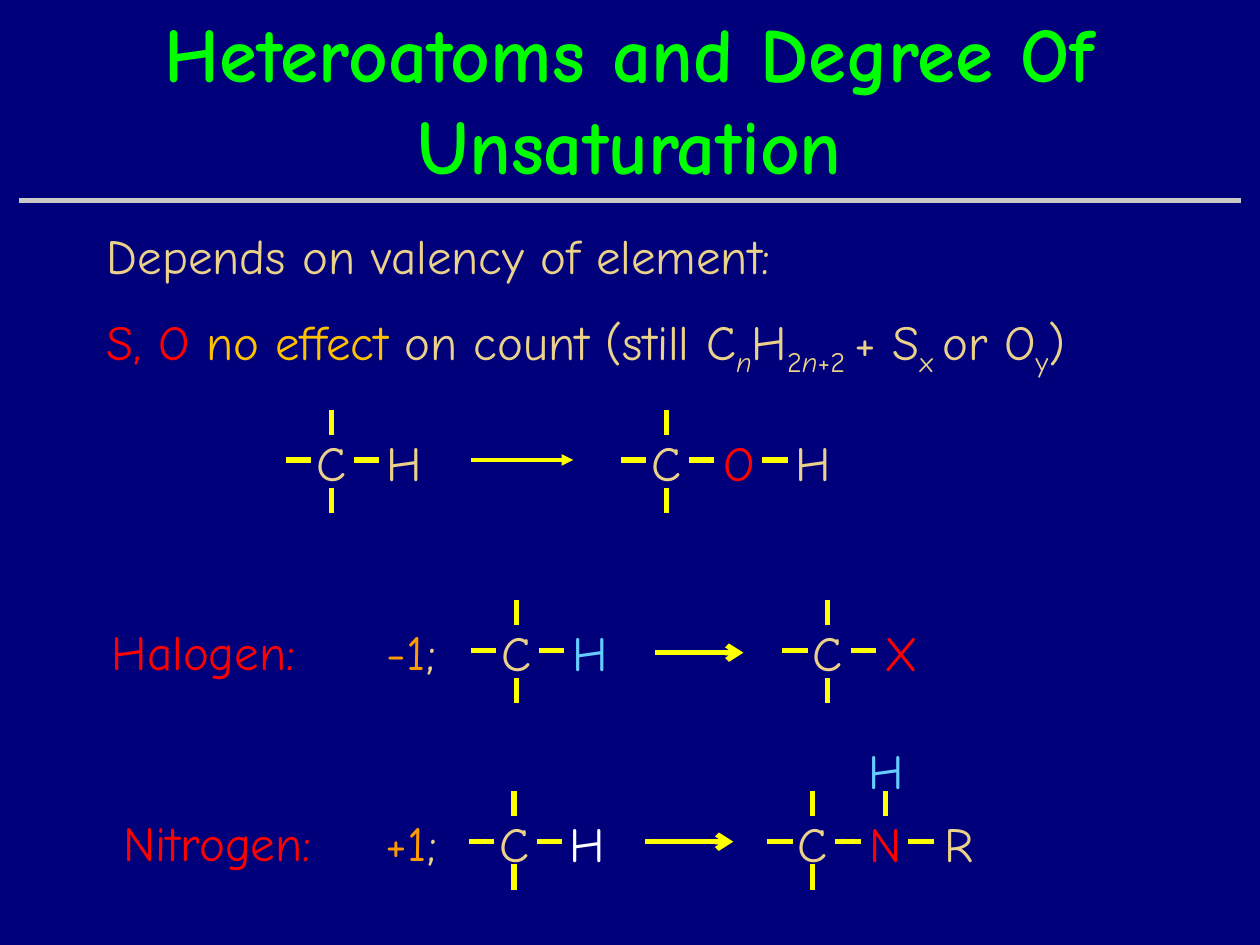
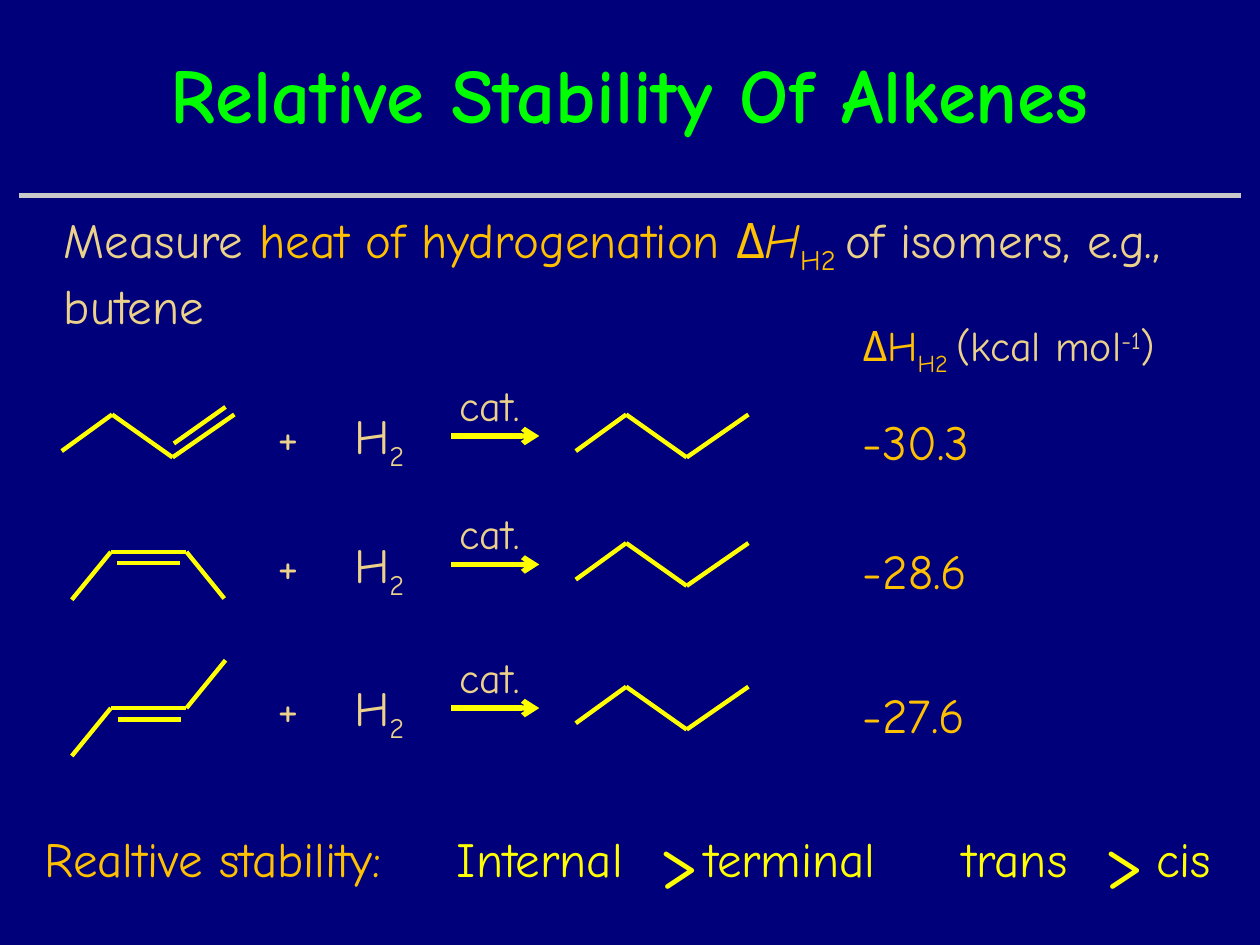
from itertools import pairwise

from lxml.etree import SubElement
from pptx import Presentation
from pptx.dml.color import RGBColor
from pptx.enum.shapes import MSO_CONNECTOR
from pptx.enum.text import MSO_ANCHOR, PP_ALIGN
from pptx.oxml.ns import qn
from pptx.util import Inches, Pt

NAVY = RGBColor(0x00, 0x00, 0x7A)
GREEN = RGBColor(0x00, 0xFF, 0x00)
SILVER = RGBColor(0xC9, 0xC9, 0xC9)
SAND = RGBColor(0xEB, 0xD1, 0x89)
RED = RGBColor(0xFF, 0x00, 0x00)
AMBER = RGBColor(0xFF, 0xC0, 0x00)
ORANGE = RGBColor(0xFF, 0x99, 0x00)
YELLOW = RGBColor(0xFF, 0xFF, 0x00)
SKY = RGBColor(0x66, 0xCC, 0xFF)
WHITE = RGBColor(0xFF, 0xFF, 0xFF)

FONT = "Comic Neue"
BASELINES = {"sub": "-25000", "sup": "30000"}
LINE_HEIGHT = 0.57
ATOM_WIDTH = 0.55
ATOM_STEP = 0.58
BOND_LENGTH = 0.2
ZIGZAG = [(0, 0.29), (0.4, 0), (0.88, 0.34), (1.37, 0)]


def add_text(shapes, box, runs, size=28, align=PP_ALIGN.CENTER, bold=False):
    """Add a text box; each run is (text, colour) or (text, colour, style words)."""
    shape = shapes.add_textbox(*map(Inches, box))
    text_frame = shape.text_frame
    text_frame.word_wrap = True
    paragraph = text_frame.paragraphs[0]
    paragraph.alignment = align
    for text, color, *styles in runs:
        run = paragraph.add_run()
        run.text = text
        font = run.font
        font.name, font.size, font.bold = FONT, Pt(size), bold
        font.color.rgb = color
        font.italic = "italic" in styles
        for style in styles:
            if style in BASELINES:
                run._r.get_or_add_rPr().set("baseline", BASELINES[style])
    return shape


def add_line(shapes, start, end, color=YELLOW, width=3, head=None):
    ends = map(Inches, (*start, *end))
    connector = shapes.add_connector(MSO_CONNECTOR.STRAIGHT, *ends)
    connector.line.color.rgb = color
    connector.line.width = Pt(width)
    if head:
        SubElement(connector.line._get_or_add_ln(), qn("a:tailEnd"), type=head)
    SubElement(connector._element.spPr, qn("a:effectLst"))


def add_titled_slide(presentation, title, title_top, rule_y):
    slide = presentation.slides.add_slide(presentation.slide_layouts[6])
    slide.background.fill.solid()
    slide.background.fill.fore_color.rgb = NAVY
    box = add_text(slide.shapes, (0.75, title_top, 8.5, 1.25),
                   [(title, GREEN)], size=44, bold=True)
    box.text_frame.vertical_anchor = MSO_ANCHOR.MIDDLE
    add_line(slide.shapes, (0.15, rule_y), (9.85, rule_y), SILVER)
    return slide


def add_atom(shapes, x, y, symbol, color):
    box = (x - ATOM_WIDTH / 2, y - 0.27, ATOM_WIDTH, LINE_HEIGHT)
    add_text(shapes, box, [(symbol, color)])


def add_molecule(slide, x, y, substituents, lower_gap=0.22, branch=None):
    """Draw a carbon at (x, y) with a chain to its right and a branch on the first atom."""
    shapes = slide.shapes.add_group_shape().shapes

    def horizontal_bond(left):
        add_line(shapes, (left, y), (left + BOND_LENGTH, y))

    def vertical_bond(bond_x, top):
        add_line(shapes, (bond_x, top), (bond_x, top + BOND_LENGTH))

    add_atom(shapes, x, y, "C", SAND)
    horizontal_bond(x - 0.36)
    vertical_bond(x, y - 0.4)
    vertical_bond(x, y + lower_gap)
    for index, (symbol, color) in enumerate(substituents):
        horizontal_bond(x + 0.18 + index * ATOM_STEP)
        add_atom(shapes, x + (index + 1) * ATOM_STEP, y, symbol, color)
    if branch:
        vertical_bond(x + ATOM_STEP, y - 0.4)
        add_atom(shapes, x + ATOM_STEP, y - ATOM_STEP, *branch)


def add_arrow(slide, x, y, length=0.7, width=3, head="arrow"):
    add_line(slide.shapes, (x, y), (x + length, y), width=width, head=head)


def add_element_label(slide, left, width, y, name, change):
    top = y - 0.28
    add_text(slide.shapes, (left, top, width, LINE_HEIGHT), [(name, RED)])
    add_text(slide.shapes, (2.83, top, 0.87, LINE_HEIGHT),
             [(change, ORANGE), (";", SAND)])


def build_heteroatoms(presentation):
    slide = add_titled_slide(
        presentation, "Heteroatoms and Degree Of Unsaturation", 0.15, 1.59)
    add_text(slide.shapes, (0.75, 1.74, 5.88, LINE_HEIGHT),
             [("Depends on valency of element:", SAND)], align=PP_ALIGN.LEFT)
    add_text(slide.shapes, (0.75, 2.42, 8.8, LINE_HEIGHT), [
        ("S, O ", RED), ("no effect ", AMBER), ("on count (still C", SAND),
        ("n", SAND, "italic", "sub"), ("H", SAND), ("2", SAND, "sub"),
        ("n", SAND, "italic", "sub"), ("+2 ", SAND, "sub"), ("+ S", SAND),
        ("x ", SAND, "sub"), ("or O", SAND), ("y", SAND, "sub"), (")", SAND),
    ], align=PP_ALIGN.LEFT)

    oxygen_y, halogen_y, nitrogen_y = 3.65, 5.16, 6.68
    add_molecule(slide, 2.63, oxygen_y, [("H", SAND)])
    add_arrow(slide, 3.74, oxygen_y, length=0.81, width=2.25, head="triangle")
    add_molecule(slide, 5.29, oxygen_y, [("O", RED), ("H", SAND)])

    add_element_label(slide, 0.72, 1.79, halogen_y, "Halogen:", "-1")
    add_molecule(slide, 4.1, halogen_y, [("H", SKY)])
    add_arrow(slide, 5.2, halogen_y + 0.02)
    add_molecule(slide, 6.57, halogen_y, [("X", RED)])

    add_element_label(slide, 0.75, 1.95, nitrogen_y, "Nitrogen:", "+1")
    add_molecule(slide, 4.08, nitrogen_y, [("H", WHITE)], lower_gap=0.18)
    add_arrow(slide, 5.12, nitrogen_y)
    add_molecule(slide, 6.45, nitrogen_y, [("N", RED), ("R", SAND)],
                 lower_gap=0.18, branch=("H", SKY))


def add_skeleton(slide, x, y, chain, double_bond=()):
    """Draw a carbon chain, and the second stroke of its double bond, from (x, y)."""
    shapes = slide.shapes.add_group_shape().shapes
    for stroke in (chain, double_bond):
        points = [(x + dx, y + dy) for dx, dy in stroke]
        for start, end in pairwise(points):
            add_line(shapes, start, end, width=2.5)


def add_hydrogenation(slide, y, chain, double_bond, heat):
    """Lay out one reaction row: alkene + hydrogen, arrow, butane and heat."""
    shapes = slide.shapes
    add_skeleton(slide, 0.49, y, chain, double_bond)
    add_text(shapes, (2, y - 0.12, 0.57, LINE_HEIGHT), [("+", SAND)])
    add_text(shapes, (2.63, y - 0.12, 0.76, LINE_HEIGHT),
             [("H", SAND), ("2", SAND, "sub")])
    add_text(shapes, (3.35, y - 0.33, 1.07, 0.5), [("cat.", SAND)], size=24)
    add_arrow(slide, 3.58, y + 0.17)
    add_skeleton(slide, 4.57, y, ZIGZAG)
    add_text(shapes, (6.75, y - 0.07, 1.24, LINE_HEIGHT), [(heat, AMBER)],
             align=PP_ALIGN.LEFT)


def add_stability_order(slide, top):
    words = [
        (-0.04, 3.46, "Realtive stability:", AMBER),
        (3.4, 1.77, "Internal", YELLOW), (5.4, 1.74, "terminal", YELLOW),
        (7.42, 1.27, "trans", YELLOW), (9, 0.79, "cis", YELLOW),
    ]
    for left, width, word, color in words:
        add_text(slide.shapes, (left, top, width, LINE_HEIGHT), [(word, color)])
    for left in (5.13, 8.66):
        add_text(slide.shapes, (left, top - 0.13, 0.36, 0.83),
                 [(">", YELLOW)], size=44)


def build_stability(presentation):
    slide = add_titled_slide(presentation, "Relative Stability Of Alkenes", 0.11, 1.55)
    add_text(slide.shapes, (0.41, 1.61, 9.2, 1.03), [
        ("Measure ", SAND), ("heat of hydrogenation Δ", AMBER),
        ("H", AMBER, "italic"), ("H2 ", AMBER, "sub"),
        ("of isomers, e.g., butene", SAND),
    ], align=PP_ALIGN.LEFT)
    add_text(slide.shapes, (6.75, 2.49, 2.98, 0.5), [
        ("ΔH", AMBER), ("H2 ", AMBER, "sub"), ("(kcal mol", SAND),
        ("-1", SAND, "sup"), (")", SAND),
    ], size=24, align=PP_ALIGN.LEFT)

    cis = [(0.08, 0.45), (0.39, 0.07), (0.99, 0.07), (1.29, 0.44)]
    trans = [(0.08, 0.55), (0.39, 0.17), (0.99, 0.17), (1.3, -0.21)]
    reactions = [
        (3.29, ZIGZAG, [(0.89, 0.23), (1.3, -0.06)], "-30.3"),
        (4.31, cis, [(0.44, 0.16), (0.94, 0.16)], "-28.6"),
        (5.45, trans, [(0.45, 0.26), (0.95, 0.26)], "-27.6"),
    ]
    for reaction in reactions:
        add_hydrogenation(slide, *reaction)
    add_stability_order(slide, 6.53)


def main():
    presentation = Presentation()
    presentation.slide_width = Inches(10)
    presentation.slide_height = Inches(7.5)
    build_heteroatoms(presentation)
    build_stability(presentation)
    presentation.save("out.pptx")


if __name__ == "__main__":
    main()
